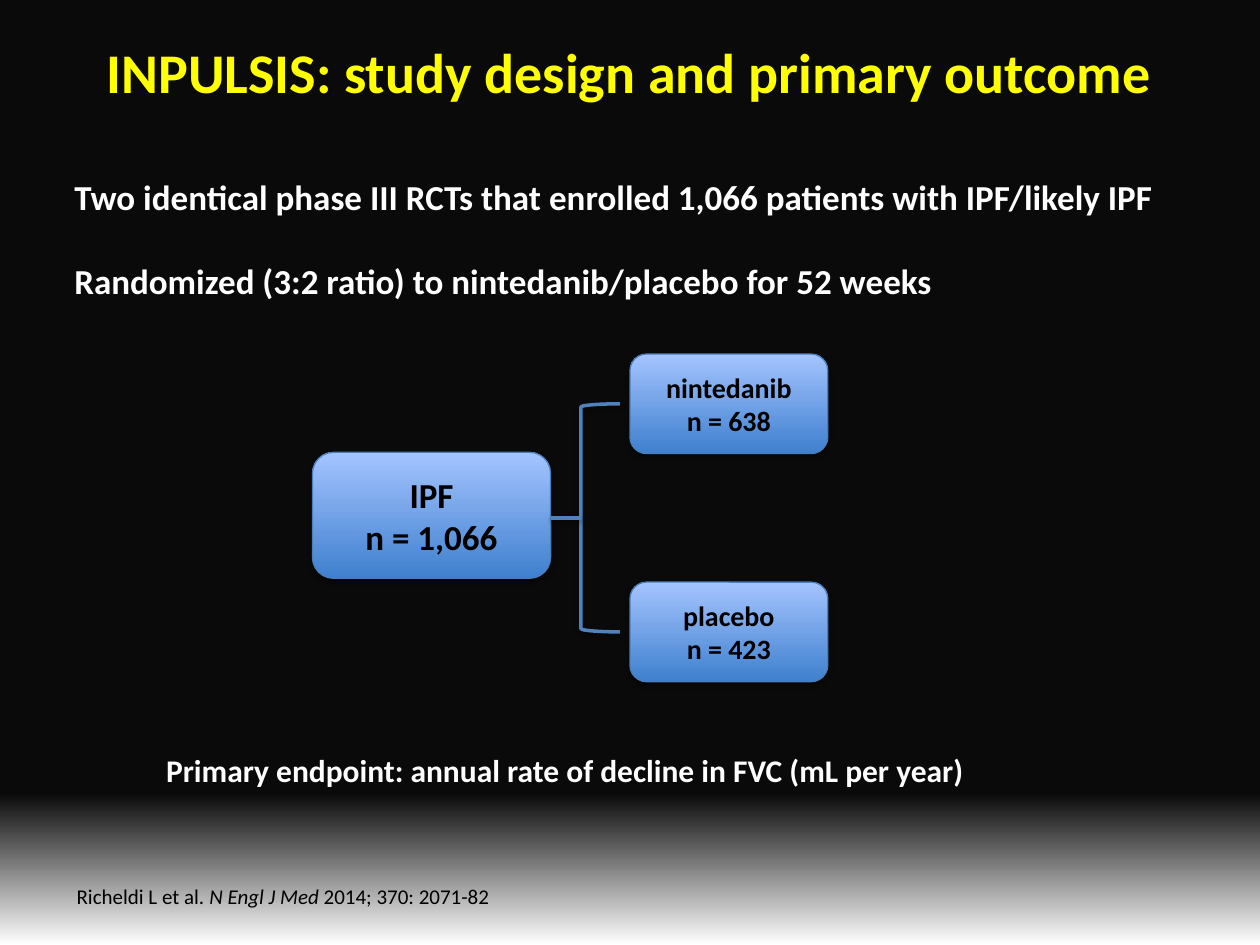
import pptx
import pptx.util
import pptx.dml.color
import pptx.enum.shapes
import pptx.enum.text
import pptx.oxml.ns
from lxml import etree

Inches, Pt = pptx.util.Inches, pptx.util.Pt
RGBColor = pptx.dml.color.RGBColor
Shape = pptx.enum.shapes.MSO_SHAPE
Align = pptx.enum.text.PP_ALIGN
Anchor = pptx.enum.text.MSO_ANCHOR
qn = pptx.oxml.ns.qn

YELLOW = RGBColor(0xFF, 0xFF, 0x00)
WHITE = RGBColor(0xFF, 0xFF, 0xFF)
BLACK = RGBColor(0x00, 0x00, 0x00)
NIGHT = RGBColor(0x0A, 0x0A, 0x0A)
DEEP_BLUE = RGBColor(0x3F, 0x80, 0xCE)
PALE_BLUE = RGBColor(0xA4, 0xC4, 0xFF)
BORDER_BLUE = RGBColor(0x4B, 0x7E, 0xBC)
LINE_BLUE = RGBColor(0x4F, 0x81, 0xBD)

TITLE = "INPULSIS: study design and primary outcome"
DESIGN = [
    "Two identical phase III RCTs that enrolled 1,066 patients with IPF/likely IPF",
    "Randomized (3:2 ratio) to nintedanib/placebo for 52 weeks",
]
ENDPOINT = "Primary endpoint: annual rate of decline in FVC (mL per year)"
CITATION = [("Richeldi L et al. ", False), ("N Engl J Med", True),
            (" 2014; 370: 2071-82", False)]
COHORT = ["IPF", "n = 1,066"]
ARMS = [["nintedanib", "n = 638"], ["placebo", "n = 423"]]

COHORT_LEFT, COHORT_TOP, COHORT_WIDTH, COHORT_HEIGHT = 2.48, 3.59, 1.89, 1
ARM_LEFT, ARM_TOP, ARM_WIDTH, ARM_HEIGHT, ARM_STEP = 5, 2.81, 1.57, 0.79, 1.81
BRACKET_LEFT, BRACKET_WIDTH = 4.61, 0.31


def style_paragraph(paragraph, size, color, bold=True, alignment=Align.LEFT):
    paragraph.alignment = alignment
    font = paragraph.font
    font.name, font.size, font.bold = "Calibri", Pt(size), bold
    font.color.rgb = color


def write_lines(frame, lines, size, color, alignment=Align.LEFT, gap=0):
    for index, line in enumerate(lines):
        paragraph = frame.add_paragraph() if index else frame.paragraphs[0]
        paragraph.text = line
        style_paragraph(paragraph, size, color, alignment=alignment)
        if index and gap:
            paragraph.space_before = Pt(gap)


def add_text_frame(slide, left, top, width, height, wrap=True):
    box = slide.shapes.add_textbox(*map(Inches, (left, top, width, height)))
    box.text_frame.word_wrap = wrap
    return box.text_frame


def set_gradient(fill, stops, angle):
    fill.gradient()
    fill.gradient_angle = angle
    for stop, (position, color) in zip(fill.gradient_stops, stops):
        stop.position = position
        stop.color.rgb = color


def add_shadow(shape, distance, opacity):
    """Give a shape or connector a soft black shadow falling straight down."""
    effects = etree.SubElement(shape._element.spPr, qn("a:effectLst"))
    shadow = etree.SubElement(
        effects, qn("a:outerShdw"), blurRad=str(Pt(3.1)), dist=str(Pt(distance)),
        dir=str(90 * 60000), rotWithShape="0")
    color = etree.SubElement(shadow, qn("a:srgbClr"), val=str(BLACK))
    etree.SubElement(color, qn("a:alpha"), val=str(opacity * 1000))


def style_line(shape, color, width):
    shape.line.color.rgb = color
    shape.line.width = Pt(width)


def add_group_box(slide, lines, size, left, top, width, height):
    box = slide.shapes.add_shape(
        Shape.ROUNDED_RECTANGLE, *map(Inches, (left, top, width, height)))
    set_gradient(box.fill, [(0, DEEP_BLUE), (1, PALE_BLUE)], 90)
    style_line(box, BORDER_BLUE, 0.75)
    add_shadow(box, 1.8, 35)
    box.text_frame.word_wrap = True
    box.text_frame.vertical_anchor = Anchor.MIDDLE
    write_lines(box.text_frame, lines, size, BLACK, Align.CENTER)


def add_branch(slide):
    """Join the cohort to the middle of each arm."""
    first_middle = ARM_TOP + ARM_HEIGHT / 2
    bracket = slide.shapes.add_shape(
        Shape.LEFT_BRACKET,
        *map(Inches, (BRACKET_LEFT, first_middle, BRACKET_WIDTH, ARM_STEP)))
    bracket.fill.background()
    middle = Inches(first_middle + ARM_STEP / 2)
    stem = slide.shapes.add_connector(
        pptx.enum.shapes.MSO_CONNECTOR.STRAIGHT,
        Inches(COHORT_LEFT + COHORT_WIDTH), middle, Inches(BRACKET_LEFT), middle)
    for shape in (bracket, stem):
        style_line(shape, LINE_BLUE, 2)
        add_shadow(shape, 1.6, 38)


def main():
    presentation = pptx.Presentation()
    presentation.slide_width, presentation.slide_height = Inches(10), Inches(7.5)
    slide = presentation.slides.add_slide(presentation.slide_layouts[6])
    set_gradient(slide.background.fill, [(0.84, NIGHT), (1, WHITE)], 270)

    title = add_text_frame(slide, 0.51, 0.25, 8.97, 0.82)
    write_lines(title, [TITLE], 32, YELLOW, Align.CENTER)

    endpoint = add_text_frame(slide, 1.22, 5.91, 7.24, 0.6)
    write_lines(endpoint, [ENDPOINT], 18, WHITE)

    design = add_text_frame(slide, 0.59, 1.39, 8.66, 0.95, wrap=False)
    design.margin_left = design.margin_right = 0
    design.margin_top = design.margin_bottom = 0
    write_lines(design, DESIGN, 20, WHITE, gap=24)

    citation = add_text_frame(slide, 0.51, 6.96, 3.52, 0.3, wrap=False)
    paragraph = citation.paragraphs[0]
    style_paragraph(paragraph, 12, BLACK, bold=False)
    for text, italic in CITATION:
        run = paragraph.add_run()
        run.text = text
        run.font.italic = italic

    add_group_box(slide, COHORT, 20,
                  COHORT_LEFT, COHORT_TOP, COHORT_WIDTH, COHORT_HEIGHT)
    add_branch(slide)
    for row, arm in enumerate(ARMS):
        add_group_box(slide, arm, 16, ARM_LEFT, ARM_TOP + row * ARM_STEP,
                      ARM_WIDTH, ARM_HEIGHT)

    presentation.save("out.pptx")


if __name__ == "__main__":
    main()
